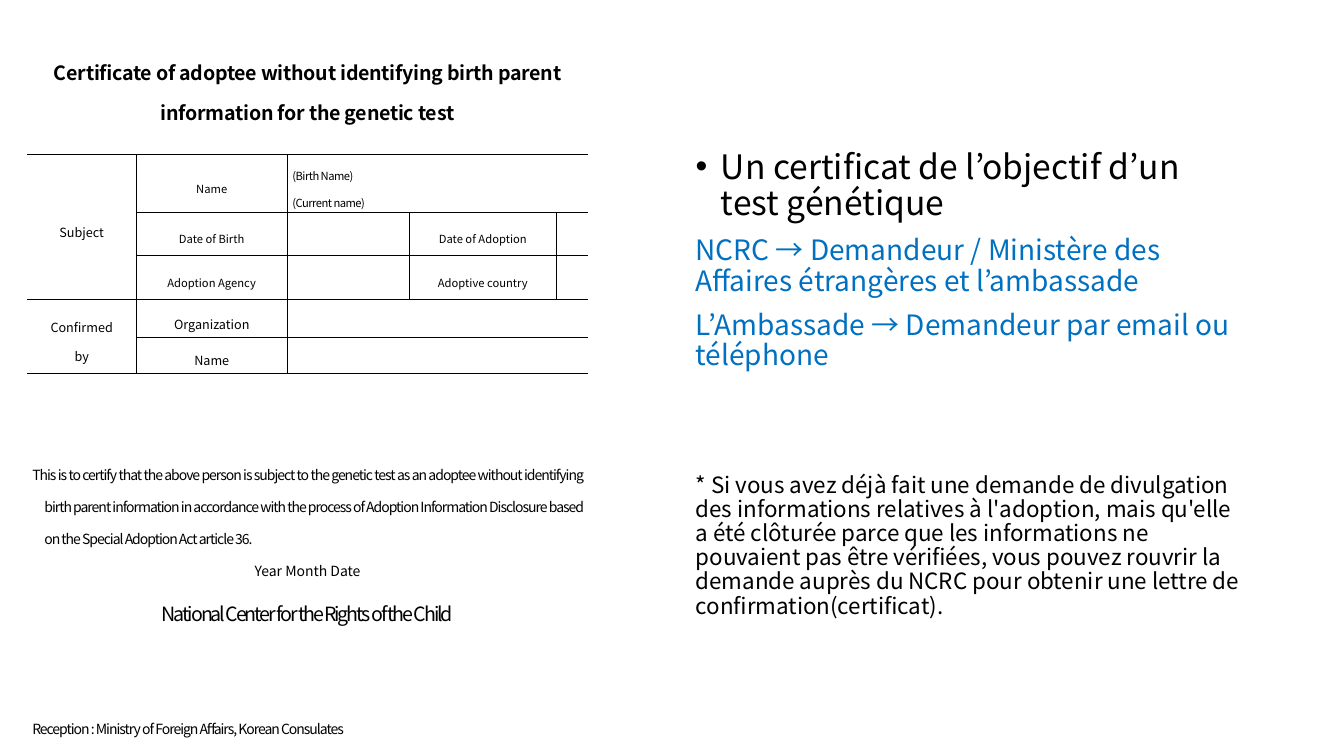
from lxml import etree
from pptx import Presentation
from pptx.dml.color import RGBColor
from pptx.enum.text import MSO_ANCHOR, MSO_AUTO_SIZE, PP_ALIGN
from pptx.oxml.ns import qn
from pptx.util import Inches, Pt

LEFT, CENTER, JUSTIFY = PP_ALIGN.LEFT, PP_ALIGN.CENTER, PP_ALIGN.JUSTIFY
MIDDLE, TOP = MSO_ANCHOR.MIDDLE, MSO_ANCHOR.TOP
NO_AUTOFIT = MSO_AUTO_SIZE.NONE
BLACK = RGBColor(0x00, 0x00, 0x00)
BLUE = RGBColor(0x00, 0x70, 0xC0)
FONT = "Noto Sans CJK KR"
NO_GRID_STYLE = "{2D5ABB26-0587-4C30-8999-92F81FD0307C}"

COLUMNS = [1.08, 1.5, 1.21, 1.46, 0.31]
ROWS = [0.23, 0.68, 0.27, 0.57, 0.43, 0.44, 0.37, 0.36, 3.3, 0.29]
GRID_ROWS = range(3, 8)  # the rows of the form that show lines
BORDER_WIDTH = 0.28
EMPTY_SIZE = 8

# Paragraph styles of the certificate
HEADING = dict(size=14, bold=True, spacing=-0.2, align=CENTER, line=1.4)
LABEL = dict(size=9, align=CENTER, line=1.6)
SMALL_LABEL = dict(size=8, align=CENTER, line=1.6)
ENTRY = dict(size=8, spacing=-0.4, align=LEFT, line=1.7)
STATEMENT = dict(size=10, spacing=-0.7, align=JUSTIFY, line=1.6,
                 margin=0.12, indent=-0.12)
DATE = dict(size=10, align=CENTER, line=1.6)
SIGNATURE = dict(size=14, spacing=-1.5, align=CENTER, line=1.6)

# (row, column): ((rows spanned, columns spanned), [(text, style), ...])
CERTIFICATE = {
    (0, 0): ((1, 5), []),
    (1, 0): ((1, 5), [("Certificate of adoptee without identifying birth parent "
                       "information for the genetic test", HEADING)]),
    (2, 0): ((1, 5), []),
    (3, 0): ((3, 1), [("Subject", LABEL)]),
    (3, 1): ((1, 1), [("Name", SMALL_LABEL)]),
    (3, 2): ((1, 3), [("(Birth Name)", ENTRY), ("(Current name)", ENTRY)]),
    (4, 1): ((1, 1), [("Date of Birth", SMALL_LABEL)]),
    (4, 2): ((1, 1), []),
    (4, 3): ((1, 1), [("Date of Adoption", SMALL_LABEL)]),
    (4, 4): ((1, 1), []),
    (5, 1): ((1, 1), [("Adoption Agency", SMALL_LABEL)]),
    (5, 2): ((1, 1), []),
    (5, 3): ((1, 1), [("Adoptive country", SMALL_LABEL)]),
    (5, 4): ((1, 1), []),
    (6, 0): ((2, 1), [("Confirmed", LABEL), ("by", LABEL)]),
    (6, 1): ((1, 1), [("Organization", LABEL)]),
    (6, 2): ((1, 3), []),
    (7, 1): ((1, 1), [("Name", LABEL)]),
    (7, 2): ((1, 3), []),
    (8, 0): ((1, 5), [
        ("This is to certify that the above person is subject to the genetic test "
         "as an adoptee without identifying birth parent information in accordance "
         "with the process of Adoption Information Disclosure based on the Special "
         "Adoption Act article 36.", STATEMENT),
        ("Year Month Date", DATE),
        ("National Center for the Rights of the Child", SIGNATURE)]),
    (9, 0): ((1, 5), [("Reception : Ministry of Foreign Affairs, Korean Consulates",
                       STATEMENT)]),
}

# Paragraph styles of the explanation
TOPIC = dict(size=24, line=0.9, before=10, margin=0.25, indent=-0.25, bullet="•")
ROUTE = dict(size=20, color=BLUE, line=0.9, before=10, bullet="")
REMARK = dict(size=16, line=0.9, before=73, bullet="")

EXPLANATION = [
    ("Un certificat de l’objectif d’un test génétique", TOPIC),
    ("NCRC → Demandeur / Ministère des Affaires étrangères et l’ambassade", ROUTE),
    ("L’Ambassade → Demandeur par email ou téléphone", ROUTE),
    ("* Si vous avez déjà fait une demande de divulgation des informations "
     "relatives à l'adoption, mais qu'elle a été clôturée parce que les "
     "informations ne pouvaient pas être vérifiées, vous pouvez rouvrir la demande "
     "auprès du NCRC pour obtenir une lettre de confirmation(certificat).", REMARK),
]


def write_paragraph(paragraph, text, size, line, align=LEFT, bold=False, spacing=0,
                    color=BLACK, before=0, margin=0, indent=0, bullet=None):
    """Fill a paragraph; a bullet of "" switches off an inherited one."""
    paragraph.alignment = align
    paragraph.line_spacing = line
    paragraph.space_before = Pt(before)
    properties = paragraph._p.get_or_add_pPr()
    properties.set("marL", str(Inches(margin)))
    properties.set("indent", str(Inches(indent)))
    if bullet:
        etree.SubElement(properties, qn("a:buChar"), char=bullet)
    elif bullet == "":
        etree.SubElement(properties, qn("a:buNone"))

    run = paragraph.add_run()
    run.text = text
    run.font.size = Pt(size)
    run.font.bold = bold
    run.font.color.rgb = color
    run.font.name = FONT
    run_properties = run._r.get_or_add_rPr()
    run_properties.set("spc", str(round(spacing * 100)))
    etree.SubElement(run_properties, qn("a:ea"), typeface=FONT)


def write_text(frame, content):
    for index, (text, style) in enumerate(content):
        paragraph = frame.add_paragraph() if index else frame.paragraphs[0]
        write_paragraph(paragraph, text, **style)


def draw_borders(cell, sides):
    for side in sides:
        line = etree.SubElement(cell._tc.get_or_add_tcPr(), qn("a:ln" + side),
                                w=str(Pt(BORDER_WIDTH)))
        fill = etree.SubElement(line, qn("a:solidFill"))
        etree.SubElement(fill, qn("a:srgbClr"), val=str(BLACK))


def add_certificate(slide):
    frame = slide.shapes.add_table(len(ROWS), len(COLUMNS), Inches(0.27), Inches(0.22),
                                   Inches(sum(COLUMNS)), Inches(sum(ROWS)))
    table = frame.table
    table.first_row = table.horz_banding = False
    table._tbl.tblPr.find(qn("a:tableStyleId")).text = NO_GRID_STYLE
    for column, width in zip(table.columns, COLUMNS):
        column.width = Inches(width)
    for row, height in zip(table.rows, ROWS):
        row.height = Inches(height)
    for cell in table.iter_cells():
        end_properties = cell.text_frame.paragraphs[0]._p.get_or_add_endParaRPr()
        end_properties.set("sz", str(EMPTY_SIZE * 100))

    for (row, column), ((height, width), content) in CERTIFICATE.items():
        cell = table.cell(row, column)
        if height * width > 1:
            cell.merge(table.cell(row + height - 1, column + width - 1))
        cell.margin_left = cell.margin_right = Inches(0.05)
        cell.margin_top = cell.margin_bottom = Inches(0.01)
        cell.vertical_anchor = MIDDLE
        write_text(cell.text_frame, content)
        if row in GRID_ROWS:
            left = "L" if column > 0 else ""
            right = "R" if column + width < len(COLUMNS) else ""
            draw_borders(cell, left + right + "TB")
        cell.fill.background()


def add_explanation(slide):
    body = slide.placeholders[1]
    body.left, body.top = Inches(6.8), Inches(1.44)
    body.width, body.height = Inches(5.61), Inches(5.55)
    frame = body.text_frame
    frame.word_wrap = True
    frame.auto_size = NO_AUTOFIT
    frame.vertical_anchor = TOP
    write_text(frame, EXPLANATION)


def main():
    presentation = Presentation()
    presentation.slide_width = Inches(13.33)
    presentation.slide_height = Inches(7.5)
    slide = presentation.slides.add_slide(presentation.slide_layouts[1])
    title = slide.shapes.title.element
    title.getparent().remove(title)
    add_certificate(slide)
    add_explanation(slide)
    presentation.save("out.pptx")


if __name__ == "__main__":
    main()
